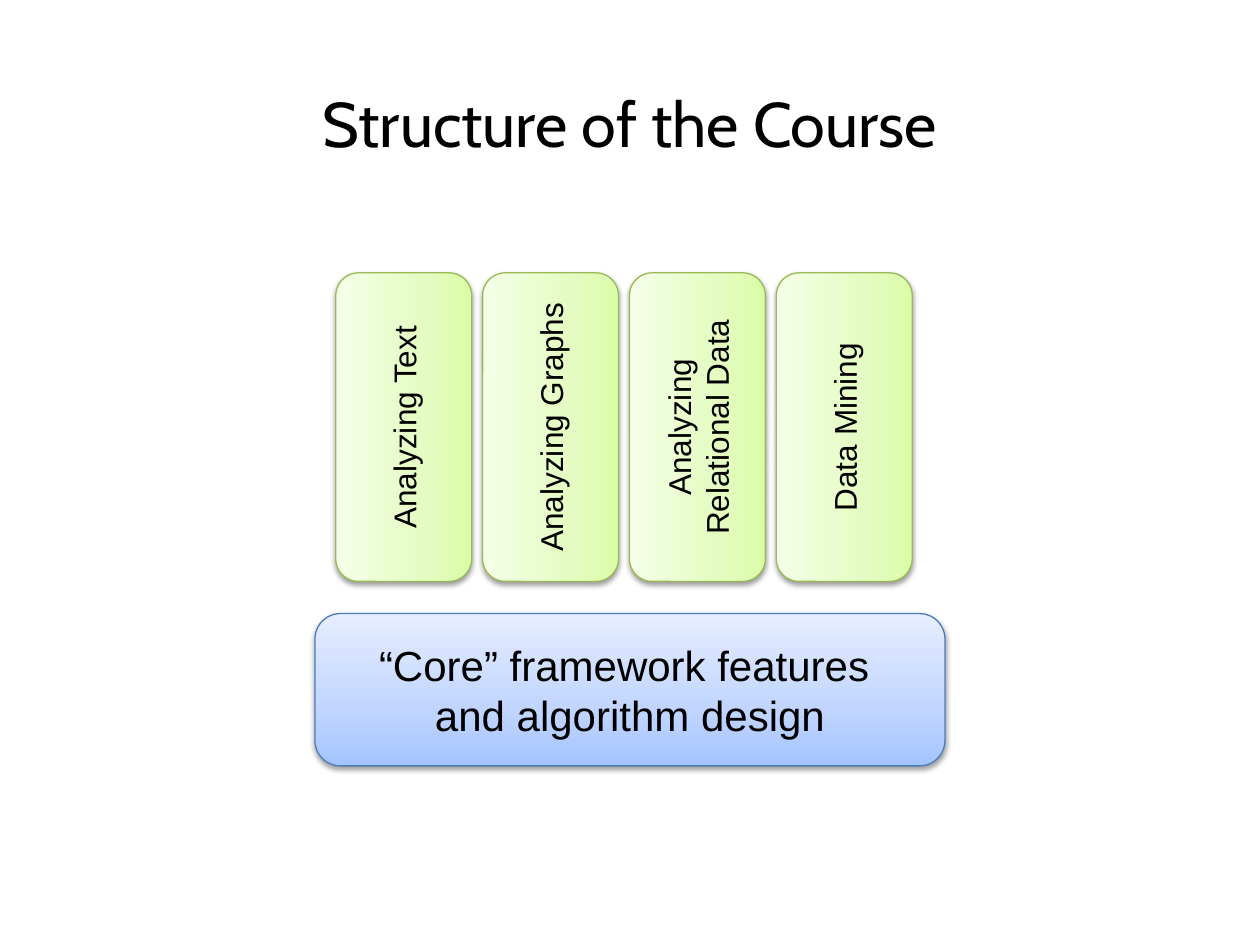
import pptx
import pptx.dml.color
import pptx.enum.shapes
import pptx.enum.text
import pptx.oxml
import pptx.oxml.ns
import pptx.util
from pptx.util import Cm, Pt

TITLE = "Structure of the Course"
CORE = "“Core” framework features \vand algorithm design"
TOPICS = ["Analyzing Text", "Analyzing Graphs", "Analyzing Relational Data", "Data Mining"]

COLORS = {"text": "000000", "core_line": "4B7EBC", "topic_line": "98B955", "shadow": "000000"}
# Gradient stops: position in percent, colour
CORE_STOPS = [(0, "A4C4FF"), (35, "BFD4FF"), (100, "E6EEFF")]
TOPIC_STOPS = [(0, "DAFDA7"), (35, "E4FCC2"), (100, "F5FFE7")]

PILLAR_LENGTH, PILLAR_WIDTH, PILLAR_GAP = 6.22, 2.74, 0.22
FIRST_CENTER_X, CENTER_Y = 8.14, 8.61

NS = pptx.oxml.ns.nsdecls("a")


def rgb(name):
    return pptx.dml.color.RGBColor.from_string(COLORS[name])


def format_text(tf, size, font):
    tf.word_wrap = True
    tf.vertical_anchor = pptx.enum.text.MSO_ANCHOR.MIDDLE
    p = tf.paragraphs[0]
    p.alignment = pptx.enum.text.PP_ALIGN.CENTER
    for r in p.runs:
        for key, value in {"name": font, "size": Pt(size)}.items():
            setattr(r.font, key, value)
        r.font.color.rgb = rgb("text")


def set_gradient(sp, stops):
    sp.fill.gradient()
    sp.fill.gradient_angle = 90
    gs_list = sp.element.spPr.find(".//" + pptx.oxml.ns.qn("a:gsLst"))
    for gs in list(gs_list):
        gs_list.remove(gs)
    for pos, color in stops:
        gs_list.append(pptx.oxml.parse_xml(
            f'<a:gs {NS} pos="{pos * 1000}"><a:srgbClr val="{color}"/></a:gs>'))


def set_shadow(sp):
    sp.shadow.inherit = False
    effects = sp.element.spPr.find(pptx.oxml.ns.qn("a:effectLst"))
    effects.append(pptx.oxml.parse_xml(
        f'<a:outerShdw {NS} blurRad="{Pt(3.1)}" dist="{Pt(1.6)}" dir="5400000" rotWithShape="0">'
        f'<a:srgbClr val="{COLORS["shadow"]}"><a:alpha val="38000"/></a:srgbClr></a:outerShdw>'))


def add_block(slide, text, box, stops, line, size, rotation=0):
    sp = slide.shapes.add_shape(
        pptx.enum.shapes.MSO_SHAPE.ROUNDED_RECTANGLE, *(Cm(v) for v in box))
    sp.rotation = rotation
    set_gradient(sp, stops)
    sp.line.color.rgb = rgb(line)
    sp.line.width = Pt(0.75)
    set_shadow(sp)
    sp.text_frame.text = text
    format_text(sp.text_frame, size, "Arial")


def main():
    prs = pptx.Presentation()
    prs.slide_width, prs.slide_height = Cm(25.4), Cm(19.05)
    slide = prs.slides.add_slide(prs.slide_layouts[5])

    title = slide.shapes.title
    place = {"left": Cm(0), "top": Cm(1.52), "width": prs.slide_width, "height": Cm(1.9)}
    for key, value in place.items():
        setattr(title, key, value)
    title.text_frame.text = TITLE
    format_text(title.text_frame, 36, "Cabin")

    add_block(slide, CORE, (6.35, 12.37, 12.7, 3.07), CORE_STOPS, "core_line", 24)
    for i, topic in enumerate(TOPICS):
        center_x = FIRST_CENTER_X + i * (PILLAR_WIDTH + PILLAR_GAP)
        box = (center_x - PILLAR_LENGTH / 2, CENTER_Y - PILLAR_WIDTH / 2,
               PILLAR_LENGTH, PILLAR_WIDTH)
        add_block(slide, topic, box, TOPIC_STOPS, "topic_line", 18, rotation=270)

    prs.save("out.pptx")


if __name__ == "__main__":
    main()
